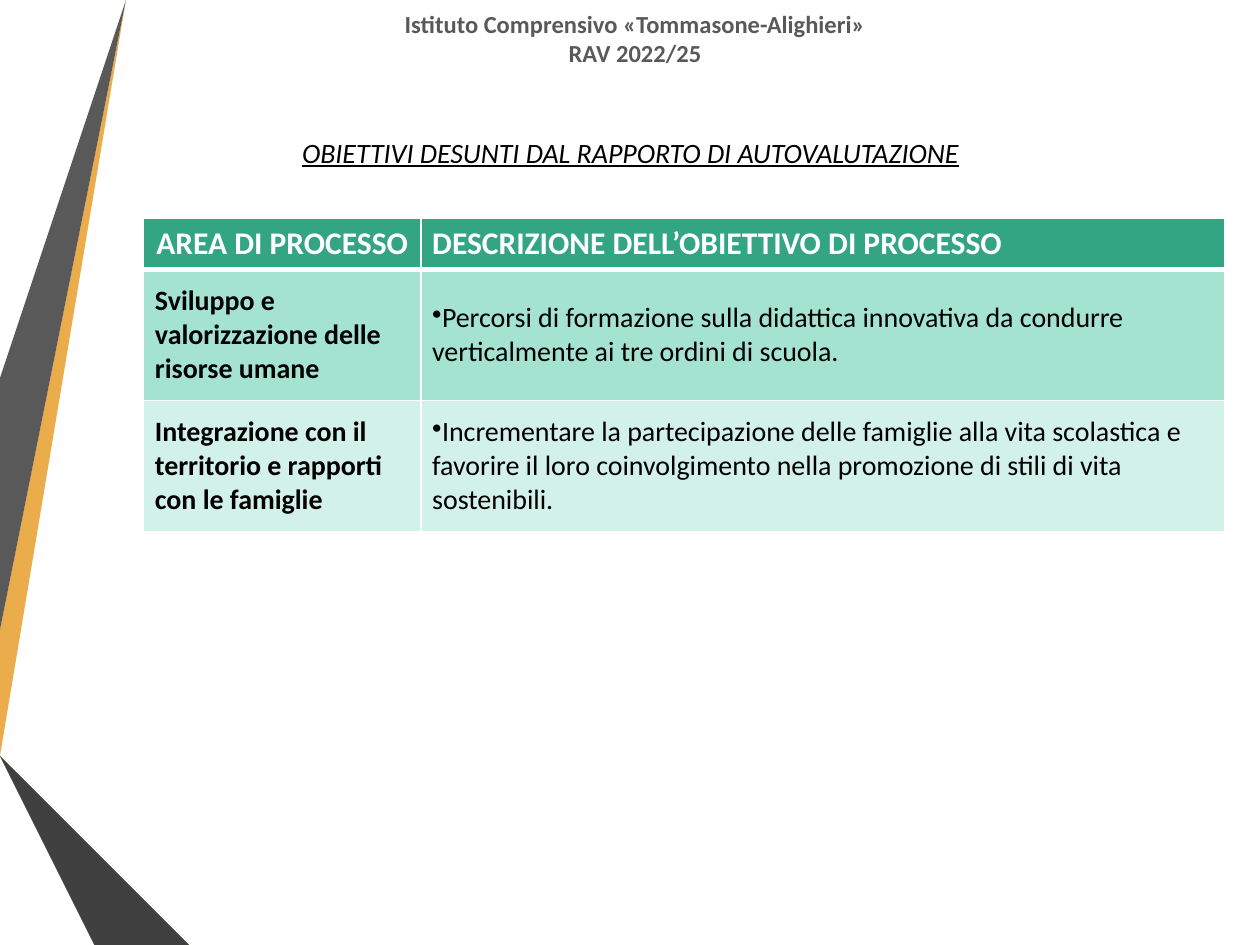
"""Build the slide of process objectives taken from the self-evaluation report."""
import pptx
import pptx.dml.color
import pptx.enum.text
import pptx.oxml
import pptx.oxml.ns
import pptx.util
from pptx.util import Inches

FONT = "Calibri"
CENTER = pptx.enum.text.PP_ALIGN.CENTER
LEFT = pptx.enum.text.PP_ALIGN.LEFT
MIDDLE = pptx.enum.text.MSO_ANCHOR.MIDDLE

RIBBONS = [
    ("EBAC4B", [(0, 5.44), (0, 5.75), (0.22, 5.79), (1.17, 0), (0.89, 0)]),
    ("595959", [(0.83, 0), (0.55, 0), (0, 3.36), (0, 5.06)]),
    ("262626", [(0, 6.19), (0, 6.21), (0.93, 7.5), (0.99, 7.5)]),
    ("8B5B10", [(0, 5.79), (0, 5.8), (1.56, 7.5), (1.63, 7.5)]),
    ("D18817", [(0, 5.79), (1.63, 7.5), (2.33, 7.5), (0.22, 5.79), (0, 5.75)]),
    ("404040", [(0, 6.19), (0.99, 7.5), (1.51, 7.5), (0, 5.86)]),
]
TITLE = "OBIETTIVI DESUNTI DAL RAPPORTO DI AUTOVALUTAZIONE"
SCHOOL = ["Istituto Comprensivo «Tommasone-Alighieri»", "RAV 2022/25"]
ROWS = [
    ("AREA DI PROCESSO", "DESCRIZIONE DELL’OBIETTIVO DI PROCESSO"),
    ("Sviluppo e valorizzazione delle risorse umane",
     "Percorsi di formazione sulla didattica innovativa da condurre verticalmente ai tre ordini di scuola."),
    ("Integrazione con il territorio e rapporti con le famiglie",
     "Incrementare la partecipazione delle famiglie alla vita scolastica e favorire il loro coinvolgimento "
     "nella promozione di stili di vita sostenibili."),
]
ROW_FILLS = ["33A583", "A5E3D1", "D2F1E8"]
ROW_HEIGHTS = [0.41, 1.04, 1.04]
COLUMN_WIDTHS = [2.2, 6.38]


def paint(fill, color):
    fill.solid()
    fill.fore_color.rgb = pptx.dml.color.RGBColor.from_string(color)


def write(paragraph, text, size, color, align=CENTER, **styles):
    paragraph.alignment = align
    run = paragraph.add_run()
    run.text = text
    run.font.name = FONT
    run.font.size = pptx.util.Pt(size)
    paint(run.font.fill, color)
    for style, value in styles.items():
        setattr(run.font, style, value)


def add_ribbon(slide, color, points):
    builder = slide.shapes.build_freeform(*points[0], scale=Inches(1))
    builder.add_line_segments(points[1:], close=True)
    shape = builder.convert_to_shape()
    shape.shadow.inherit = False
    paint(shape.fill, color)
    shape.line.fill.background()


def add_bullet(paragraph):
    properties = paragraph._p.get_or_add_pPr()
    properties.set("marL", "0")
    properties.set("indent", "0")
    bullet = pptx.oxml.parse_xml(f'<a:buChar {pptx.oxml.ns.nsdecls("a")} char="•"/>')
    properties.append(bullet)


def add_borders(cell, widths):
    for position, (side, width) in enumerate(widths.items()):
        border = pptx.oxml.parse_xml(
            f'<a:ln{side} {pptx.oxml.ns.nsdecls("a")} w="{pptx.util.Pt(width)}">'
            '<a:solidFill><a:srgbClr val="FFFFFF"/></a:solidFill>'
            f'</a:ln{side}>')
        cell._tc.get_or_add_tcPr().insert(position, border)


def add_objectives(slide):
    frame = slide.shapes.add_table(len(ROWS), len(COLUMN_WIDTHS), Inches(1.14), Inches(1.73),
                                   Inches(sum(COLUMN_WIDTHS)), Inches(sum(ROW_HEIGHTS)))
    table = frame.table
    for column, width in zip(table.columns, COLUMN_WIDTHS):
        column.width = Inches(width)
    for row, height in zip(table.rows, ROW_HEIGHTS):
        row.height = Inches(height)
    for row_index, texts in enumerate(ROWS):
        header = row_index == 0
        for column_index, text in enumerate(texts):
            cell = table.cell(row_index, column_index)
            cell.vertical_anchor = MIDDLE
            cell.margin_left = cell.margin_right = Inches(0.09)
            paint(cell.fill, ROW_FILLS[row_index])
            add_borders(cell, {"L": 1, "R": 1, "T": 3 if row_index == 1 else 1, "B": 3 if header else 1})
            paragraph = cell.text_frame.paragraphs[0]
            area = column_index == 0
            write(paragraph, text, 18 if header else 16, "FFFFFF" if header else "000000",
                  CENTER if header and area else LEFT, bold=header or area)
            if not header and not area:
                add_bullet(paragraph)


def main():
    presentation = pptx.Presentation()
    presentation.slide_width, presentation.slide_height = Inches(10), Inches(7.5)
    slide = presentation.slides.add_slide(presentation.slide_layouts[5])
    for color, points in RIBBONS:
        add_ribbon(slide, color, points)

    title = slide.shapes.title
    title.left, title.top, title.width, title.height = map(Inches, (0.91, 1.02, 8.19, 0.37))
    title.text_frame.vertical_anchor = MIDDLE
    write(title.text_frame.paragraphs[0], TITLE, 16, "000000", italic=True, underline=True)

    add_objectives(slide)

    school = slide.shapes.add_textbox(*map(Inches, (1.14, 0.02, 7.8, 0.57))).text_frame
    school.word_wrap = True
    for index, text in enumerate(SCHOOL):
        paragraph = school.add_paragraph() if index else school.paragraphs[0]
        write(paragraph, text, 14, "595959", bold=True)

    presentation.save("out.pptx")


if __name__ == "__main__":
    main()
